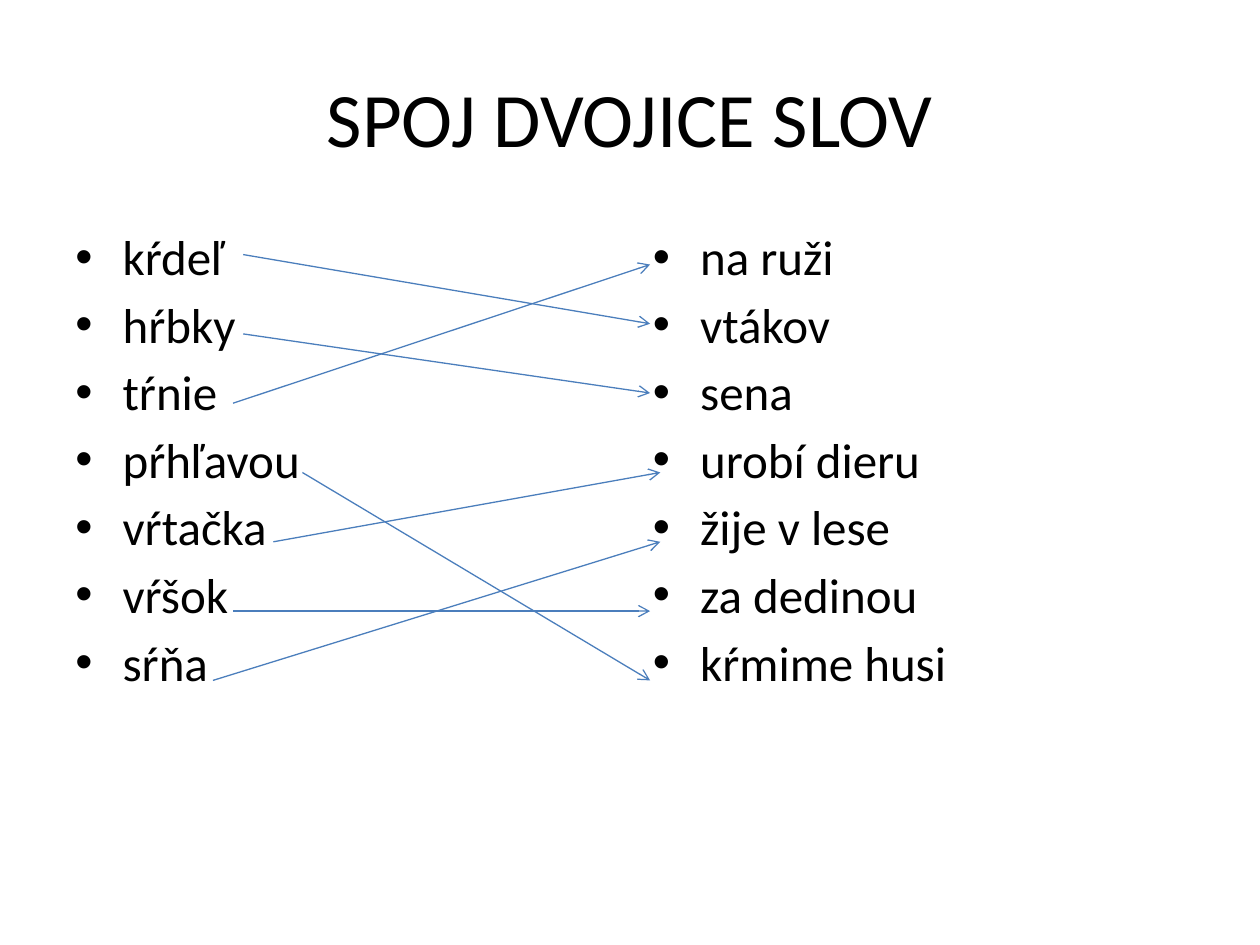
from lxml import etree
from pptx import Presentation
from pptx.dml.color import RGBColor
from pptx.enum.shapes import MSO_CONNECTOR
from pptx.enum.text import MSO_ANCHOR, PP_ALIGN
from pptx.oxml.ns import qn
from pptx.util import Pt

BLACK = RGBColor(0x00, 0x00, 0x00)
BLUE = RGBColor(0x4B, 0x7E, 0xBC)
STRAIGHT = MSO_CONNECTOR.STRAIGHT
LEFT, CENTER = PP_ALIGN.LEFT, PP_ALIGN.CENTER
TOP, MIDDLE = MSO_ANCHOR.TOP, MSO_ANCHOR.MIDDLE

WORDS = ["kŕdeľ", "hŕbky", "tŕnie", "pŕhľavou", "vŕtačka", "vŕšok", "sŕňa"]
MATCHES = ["na ruži", "vtákov", "sena", "urobí dieru", "žije v lese",
           "za dedinou", "kŕmime husi"]

# Start and end of the arrow for each word, in points
ARROWS = [
    (139, 145.5, 371.5, 185),
    (139, 190.8, 371.5, 224.6),
    (133.2, 230.4, 371.5, 151.2),
    (172.8, 270, 371.5, 388.8),
    (156.2, 309.6, 377.3, 270),
    (133.2, 349.2, 371.5, 349.2),
    (121.7, 388.8, 377.3, 309.6),
]


def add_text(slide, lines, left, top, width, height, size, align=LEFT,
             anchor=TOP, space_before=0, bullet_indent=0):
    """Add a text box with one paragraph per line, bulleted if indented."""
    box = slide.shapes.add_textbox(Pt(left), Pt(top), Pt(width), Pt(height))
    frame = box.text_frame
    frame.word_wrap = True
    frame.vertical_anchor = anchor
    frame.text = "\n".join(lines)
    for paragraph in frame.paragraphs:
        paragraph.alignment = align
        paragraph.space_before = Pt(space_before)
        font = paragraph.runs[0].font
        font.name = "Calibri"
        font.size = Pt(size)
        font.color.rgb = BLACK
        if bullet_indent:
            properties = paragraph._p.get_or_add_pPr()
            properties.set("marL", str(Pt(bullet_indent)))
            properties.set("indent", str(-Pt(bullet_indent)))
            etree.SubElement(properties, qn("a:buFont"), typeface="Arial")
            etree.SubElement(properties, qn("a:buChar"), char="•")


presentation = Presentation()
presentation.slide_width = Pt(720)
presentation.slide_height = Pt(540)
slide = presentation.slides.add_slide(presentation.slide_layouts[6])

add_text(slide, ["SPOJ DVOJICE SLOV"], 36, 21.6, 648, 90, size=44,
         align=CENTER, anchor=MIDDLE)

for column, left in ((WORDS, 36), (MATCHES, 366)):
    add_text(slide, column, left, 126, 318, 356.4, size=28,
             space_before=5, bullet_indent=27)

for start_x, start_y, end_x, end_y in ARROWS:
    arrow = slide.shapes.add_connector(
        STRAIGHT, Pt(start_x), Pt(start_y), Pt(end_x), Pt(end_y))
    arrow.line.color.rgb = BLUE
    arrow.line.width = Pt(0.75)
    etree.SubElement(arrow.line._get_or_add_ln(), qn("a:tailEnd"), type="arrow")
    etree.SubElement(arrow._element.spPr, qn("a:effectLst"))

presentation.save("out.pptx")
